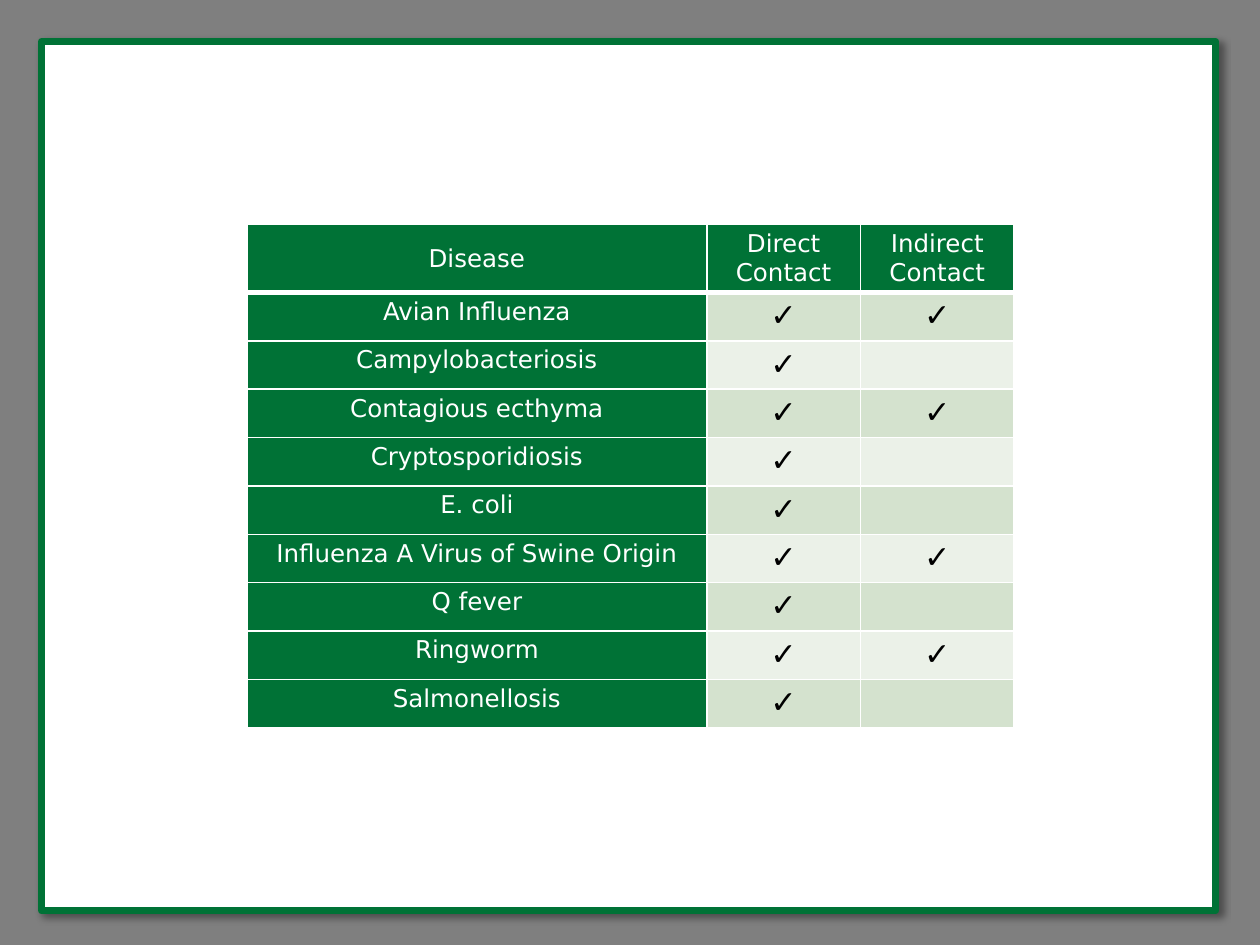
import pptx
import pptx.dml.color
import pptx.enum.shapes
import pptx.enum.text
import pptx.oxml
import pptx.oxml.ns
import pptx.util
from lxml import etree

Pt = pptx.util.Pt
COLORS = {
    "background": "7F7F7F",
    "green": "007236",
    "white": "FFFFFF",
    "black": "000000",
    "band_dark": "D4E2CE",
    "band_light": "EBF1E8",
}
FONT = "DejaVu Sans"
HEADERS = ["Disease", "Direct Contact", "Indirect Contact"]
DISEASES = [
    ("Avian Influenza", "✓", "✓"),
    ("Campylobacteriosis", "✓", ""),
    ("Contagious ecthyma", "✓", "✓"),
    ("Cryptosporidiosis", "✓", ""),
    ("E. coli", "✓", ""),
    ("Influenza A Virus of Swine Origin", "✓", "✓"),
    ("Q fever", "✓", ""),
    ("Ringworm", "✓", "✓"),
    ("Salmonellosis", "✓", ""),
]


def rgb(name):
    return pptx.dml.color.RGBColor.from_string(COLORS[name])


def add_border(cell, side, width):
    tcPr = cell._tc.get_or_add_tcPr()
    ln = etree.SubElement(tcPr, pptx.oxml.ns.qn(f"a:ln{side}"), w=str(Pt(width)))
    fill = etree.SubElement(ln, pptx.oxml.ns.qn("a:solidFill"))
    etree.SubElement(fill, pptx.oxml.ns.qn("a:srgbClr"), val=COLORS["white"])


prs = pptx.Presentation()
prs.slide_width, prs.slide_height = Pt(720), Pt(540)
s = prs.slides.add_slide(prs.slide_layouts[6])
s.background.fill.solid()
s.background.fill.fore_color.rgb = rgb("background")

sp = s.shapes.add_shape(
    pptx.enum.shapes.MSO_SHAPE.RECTANGLE, Pt(23.76), Pt(23.76), Pt(671.04), Pt(496.8)
)
sp.fill.solid()
sp.fill.fore_color.rgb = rgb("white")
sp.line.color.rgb = rgb("green")
sp.line.width = Pt(4)
etree.SubElement(sp.line._get_or_add_ln(), pptx.oxml.ns.qn("a:round"))
sp.shadow.inherit = False
effects = sp._element.spPr.find(pptx.oxml.ns.qn("a:effectLst"))
shadow = etree.SubElement(
    effects, pptx.oxml.ns.qn("a:outerShdw"),
    blurRad=str(Pt(4)), dist=str(Pt(3)), dir=str(45 * 60000), algn="tl", rotWithShape="0",
)
color = etree.SubElement(shadow, pptx.oxml.ns.qn("a:srgbClr"), val=COLORS["black"])
etree.SubElement(color, pptx.oxml.ns.qn("a:alpha"), val="40000")

rows = [HEADERS, *DISEASES]
table = s.shapes.add_table(
    len(rows), len(HEADERS), Pt(141.12), Pt(128.4), Pt(438.4), Pt(286.4)
).table
for column, width in zip(table.columns, [262.8, 87.8, 87.8]):
    column.width = Pt(width)

for i, row in enumerate(rows):
    table.rows[i].height = Pt(27.65 if i else 37.6)
    for j, text in enumerate(row):
        cell = table.cell(i, j)
        cell.margin_left = cell.margin_right = Pt(5)
        cell.margin_top = cell.margin_bottom = Pt(2.9)
        for side in "LRTB":
            heavy = (i, side) in [(0, "B"), (1, "T")]
            add_border(cell, side, 3 if heavy else 1)
        label = i == 0 or j == 0
        band = "band_dark" if i % 2 else "band_light"
        cell.fill.solid()
        cell.fill.fore_color.rgb = rgb("green" if label else band)
        if i == 0:
            cell.vertical_anchor = pptx.enum.text.MSO_ANCHOR.MIDDLE
        cell.text = text
        p = cell.text_frame.paragraphs[0]
        p.alignment = pptx.enum.text.PP_ALIGN.CENTER
        p.font.name = FONT
        p.font.size = Pt(14 if label else 18)
        p.font.bold = not label
        p.font.color.rgb = rgb("white" if label else "black")

prs.save("out.pptx")
